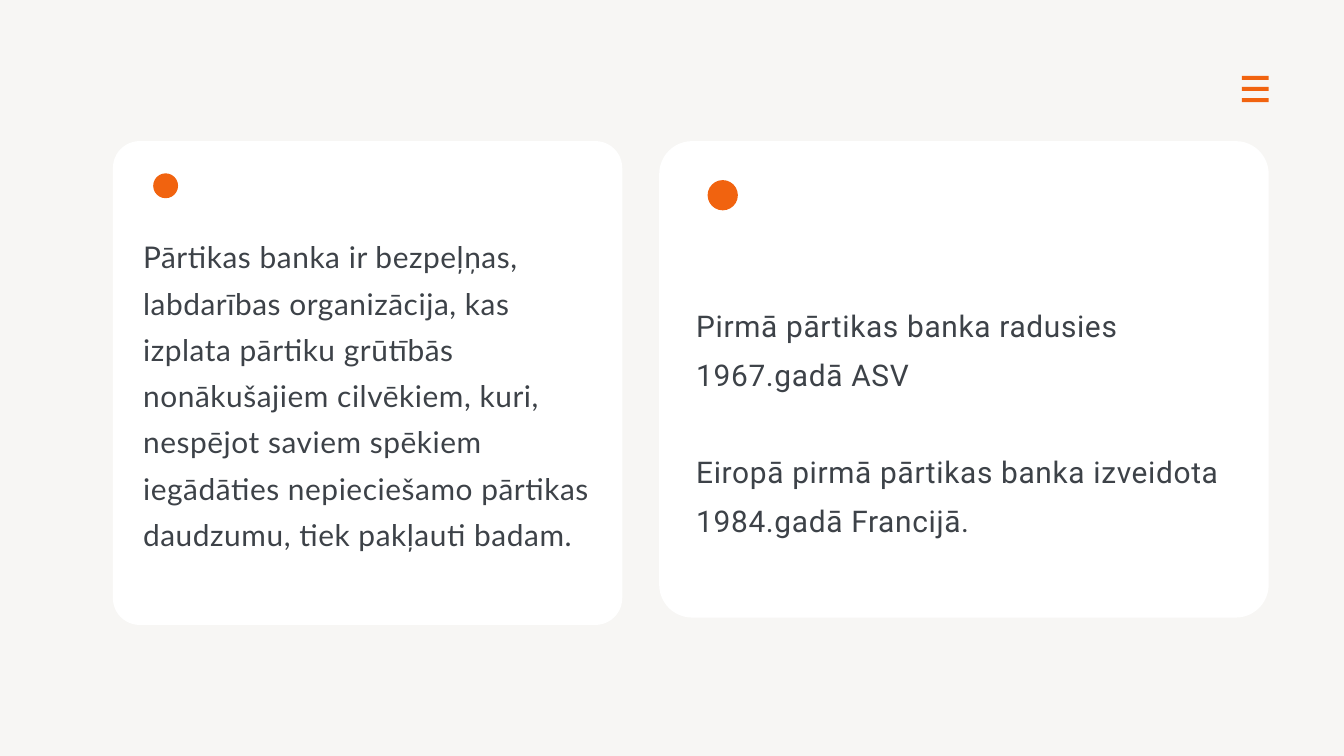
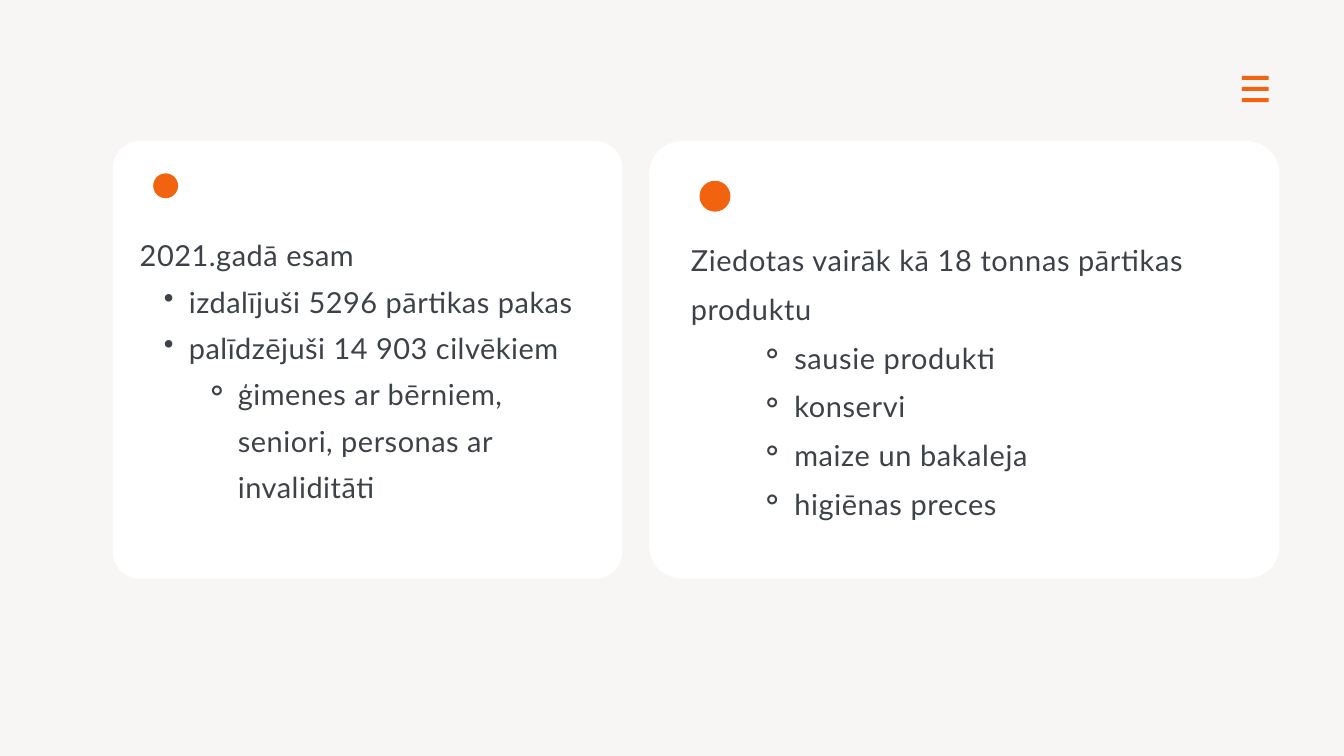
from dataclasses import dataclass

from lxml.etree import SubElement
from pptx import Presentation
from pptx.dml.color import RGBColor
from pptx.enum.shapes import MSO_SHAPE
from pptx.oxml.ns import qn
from pptx.util import Inches, Pt

COLORS = {
    "background": "F7F6F4",
    "card": "FFFFFF",
    "accent": "F1630F",
    "text": "3D4248",
}
CARD_TOP = 2.1


@dataclass
class Box:
    left: float
    top: float
    width: float
    height: float

    def inside(self, left, top, width, height):
        return Box(self.left + left, self.top + top, width, height)

    def lengths(self):
        return [Inches(side) for side in (self.left, self.top, self.width, self.height)]


@dataclass
class TextStyle:
    size: float
    line: float
    tracking: float
    font: str = "Lato"
    gap: float = 0


@dataclass
class Item:
    text: str
    level: int = 0
    bullet: str = ""
    margin: float = 0
    hanging: float = 0


def color(name):
    return RGBColor.from_string(COLORS[name])


def add_filled(group, kind, box, fill):
    shape = group.shapes.add_shape(kind, *box.lengths())
    shape.shadow.inherit = False
    shape.fill.solid()
    shape.fill.fore_color.rgb = color(fill)
    shape.line.fill.background()
    return shape


def add_menu_icon(page, box):
    group = page.shapes.add_group_shape()
    bar_height = 0.06
    step = (box.height - bar_height) / 2
    for row in range(3):
        bar = box.inside(0, row * step, box.width, bar_height)
        add_filled(group, MSO_SHAPE.RECTANGLE, bar, "accent")


def add_item(para, item, style):
    para.level = item.level
    if item.bullet:
        properties = para._p.get_or_add_pPr()
        properties.set("marL", str(Inches(item.margin)))
        properties.set("indent", str(Inches(-item.hanging)))
        SubElement(properties, qn("a:buChar")).set("char", item.bullet)
    para.line_spacing = Pt(style.line)
    span = para.add_run()
    span.text = item.text
    span.font.size = Pt(style.size)
    span.font.name = style.font
    span.font.color.rgb = color("text")
    span._r.get_or_add_rPr().set("spc", str(round(style.tracking * 100)))


def add_text(group, box, items, style):
    frame = group.shapes.add_textbox(*box.lengths()).text_frame
    frame.word_wrap = True
    frame.margin_left = frame.margin_top = frame.margin_right = frame.margin_bottom = 0
    for index, item in enumerate(items):
        para = frame.add_paragraph() if index else frame.paragraphs[0]
        add_item(para, item, style)
        if index and style.gap:
            para.space_before = Pt(style.gap)


def add_card(page, box, radius, dot, text_area, items, style):
    group = page.shapes.add_group_shape()
    panel = add_filled(group, MSO_SHAPE.ROUNDED_RECTANGLE, box, "card")
    panel.adjustments[0] = radius / min(box.width, box.height)
    add_text(group, box.inside(*text_area), items, style)
    left, top, size = dot
    add_filled(group, MSO_SHAPE.OVAL, box.inside(left, top, size, size), "accent")


def add_left_card(page, height, text_area, items, size):
    box = Box(1.68, CARD_TOP, 7.58, height)
    add_card(page, box, 0.4, (0.6, 0.48, 0.37), text_area, items,
             TextStyle(size, 49.6, 0.6))


def add_right_card(page, box, dot, text_area, items, style):
    add_card(page, box, 0.49, dot, text_area, items, style)


def add_page(deck):
    page = deck.slides.add_slide(deck.slide_layouts[6])
    page.background.fill.solid()
    page.background.fill.fore_color.rgb = color("background")
    add_menu_icon(page, Box(18.48, 1.13, 0.4, 0.39))
    return page


def build_history(deck):
    page = add_page(deck)
    purpose = [Item(
        "Pārtikas banka ir bezpeļņas, labdarības organizācija, kas izplata pārtiku "
        "grūtībās nonākušajiem cilvēkiem, kuri, nespējot saviem spēkiem iegādāties "
        "nepieciešamo pārtikas daudzumu, tiek pakļauti badam."
    )]
    add_left_card(page, 7.2, (0.45, 1.3, 6.76, 6.24), purpose, 32)
    origins = [
        Item("Pirmā pārtikas banka radusies 1967.gadā ASV"),
        Item("Eiropā pirmā pārtikas banka izveidota 1984.gadā Francijā."),
    ]
    add_right_card(page, Box(9.81, CARD_TOP, 9.07, 7.09), (0.72, 0.58, 0.45),
                   (0.55, 2.29, 8.09, 4.31), origins,
                   TextStyle(32, 52.1, 0.7, "Roboto", 52.1))


def build_results(deck):
    page = add_page(deck)
    helped = [Item("2021.gadā esam")]
    helped += [Item(text, 1, "•", 0.73, 0.37) for text in (
        "izdalījuši 5296 pārtikas pakas",
        "palīdzējuši 14 903 cilvēkiem",
    )]
    helped.append(Item("ģimenes ar bērniem, seniori, personas ar invaliditāti",
                       2, "⚬", 1.46, 0.49))
    add_left_card(page, 6.51, (0.4, 1.27, 6.76, 4.84), helped, 31)
    donated = [Item("Ziedotas vairāk kā 18 tonnas pārtikas produktu")]
    donated += [Item(text, 2, "⚬", 1.54, 0.51) for text in (
        "sausie produkti", "konservi", "maize un bakaleja", "higiēnas preces",
    )]
    add_right_card(page, Box(9.66, CARD_TOP, 9.38, 6.51), (0.75, 0.59, 0.46),
                   (0.62, 1.31, 8.37, 5.14), donated, TextStyle(31, 52.1, 0.7))


def main():
    deck = Presentation()
    deck.slide_width = Inches(20)
    deck.slide_height = Inches(11.25)
    build_history(deck)
    build_results(deck)
    deck.save("out.pptx")


if __name__ == "__main__":
    main()
